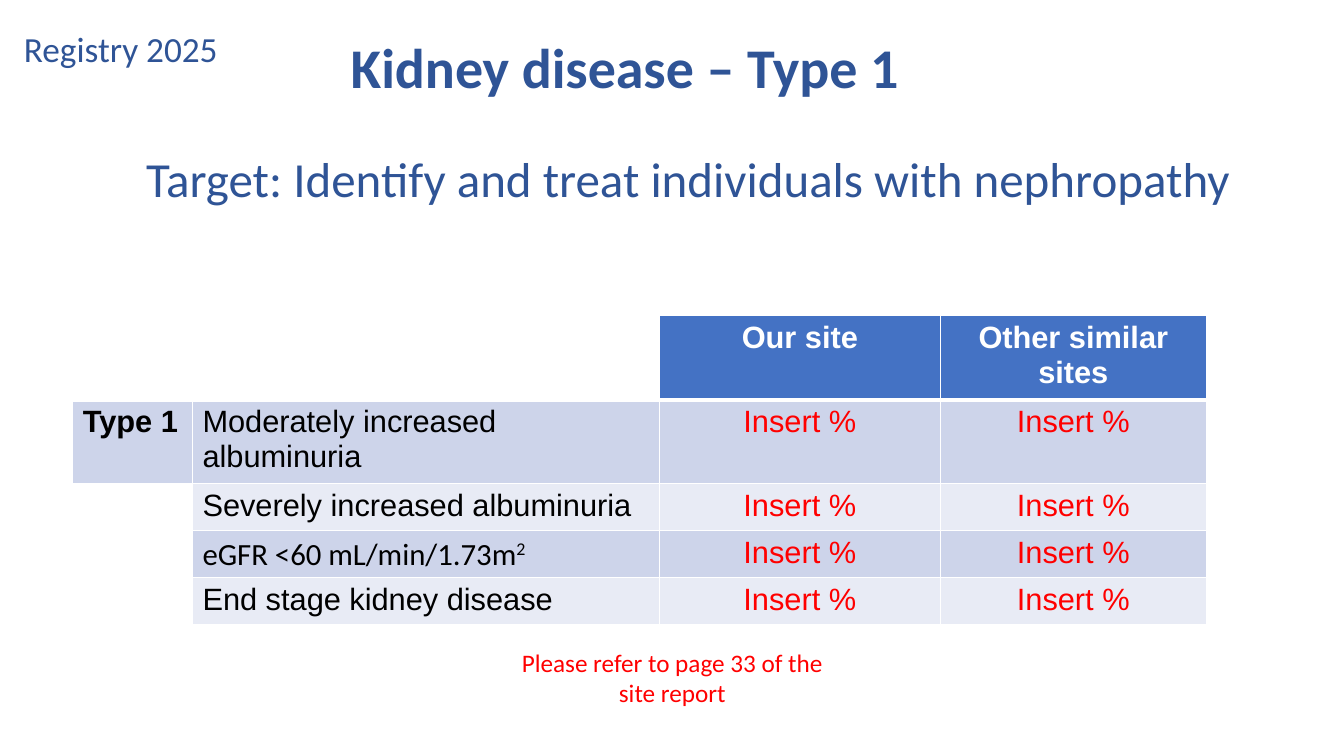
from dataclasses import dataclass

from lxml.etree import SubElement
from pptx import Presentation
from pptx.dml.color import RGBColor as Color
from pptx.enum.text import MSO_ANCHOR as Anchor, MSO_AUTO_SIZE as AutoSize, PP_ALIGN as Align
from pptx.oxml.ns import qn
from pptx.util import Pt


@dataclass(frozen=True)
class Theme:
    heading: str = "2F5496"
    header_fill: str = "4472C4"
    bands: tuple[str, str] = ("CDD4EA", "E8EBF5")
    white: str = "FFFFFF"
    black: str = "000000"
    prompt: str = "FF0000"
    heading_font: str = "Calibri"
    table_font: str = "Arial"
    tag_size: float = 25.2
    title_size: float = 40
    target_size: float = 35
    table_size: float = 22
    note_size: float = 18


THEME = Theme()


@dataclass(frozen=True)
class Style:
    size: float
    color: str
    font: str = THEME.heading_font
    bold: bool = False
    align: Align = Align.LEFT


@dataclass(frozen=True)
class Label:
    text: str
    left: float
    top: float
    width: float
    height: float
    style: Style
    spacing: float = 1.0
    anchor: Anchor = Anchor.TOP
    inset: float = 3.6
    grow: bool = False


@dataclass(frozen=True)
class Measure:
    name: str
    group: str = ""
    font: str = THEME.table_font
    superscript: str = ""


LABELS = [
    Label("Registry 2025", 10, 19.4, 162, 34, Style(THEME.tag_size, THEME.heading),
          spacing=0.9, anchor=Anchor.MIDDLE),
    Label("Target: Identify and treat individuals with nephropathy", 97.2, 107.3, 860, 46,
          Style(THEME.target_size, THEME.heading), spacing=0.9),
    Label("Kidney disease – Type 1", 243.4, 19.4, 422, 55.5,
          Style(THEME.title_size, THEME.heading, bold=True), grow=True),
    Label("Please refer to page 33 of the site report", 362.2, 455, 236, 58.3,
          Style(THEME.note_size, THEME.prompt, align=Align.CENTER), inset=7.2, grow=True),
]

COLUMN_WIDTHS = (85.5, 333.5, 200.7, 190)
ROW_HEIGHT = 33.5
HEADERS = ("", "", "Our site", "Other similar sites")
PROMPT = "Insert %"
MEASURES = [
    Measure("Moderately increased albuminuria", group="Type 1"),
    Measure("Severely increased albuminuria"),
    Measure("eGFR <60 mL/min/1.73m", font=THEME.heading_font, superscript="2"),
    Measure("End stage kidney disease"),
]


def format_para(para, style: Style) -> None:
    para.alignment = style.align
    for span in para.runs:
        font = span.font
        font.name, font.size, font.bold = style.font, Pt(style.size), style.bold
        font.color.rgb = Color.from_string(style.color)


def add_label(page, label: Label) -> None:
    box = page.shapes.add_textbox(*map(Pt, (label.left, label.top, label.width, label.height)))
    frame = box.text_frame
    frame.text = label.text
    frame.word_wrap = True
    frame.vertical_anchor = label.anchor
    frame.auto_size = AutoSize.SHAPE_TO_FIT_TEXT if label.grow else AutoSize.NONE
    frame.margin_top = frame.margin_bottom = Pt(label.inset)
    para = frame.paragraphs[0]
    para.line_spacing = label.spacing
    format_para(para, label.style)


def set_borders(cell, top: float, bottom: float) -> None:
    properties = cell._tc.get_or_add_tcPr()
    for side, width in (("L", 1), ("R", 1), ("T", top), ("B", bottom)):
        line = SubElement(properties, qn(f"a:ln{side}"), w=str(Pt(width)))
        SubElement(SubElement(line, qn("a:solidFill")), qn("a:srgbClr"), val=THEME.white)


def fill_cell(cell, text: str, fill: str, style: Style, superscript: str = "") -> None:
    cell.fill.solid()
    cell.fill.fore_color.rgb = Color.from_string(fill)
    if not text:
        return
    para = cell.text_frame.paragraphs[0]
    para.text = text
    if superscript:
        raised = para.add_run()
        raised.text = superscript
        raised.font._element.set("baseline", "30000")
    format_para(para, style)


def add_results_table(page) -> None:
    rows, columns = len(MEASURES) + 1, len(COLUMN_WIDTHS)
    table = page.shapes.add_table(rows, columns, Pt(52), Pt(225.5),
                                  Pt(sum(COLUMN_WIDTHS)), Pt(ROW_HEIGHT * rows)).table
    table.first_row = table.horz_banding = False
    for column, width in zip(table.columns, COLUMN_WIDTHS):
        column.width = Pt(width)
    for index, row in enumerate(table.rows):
        row.height = Pt(ROW_HEIGHT)
        for cell in row.cells:
            # A heavier rule separates the header from the body
            set_borders(cell, top=3 if index == 1 else 1, bottom=3 if index == 0 else 1)

    # Header row
    size, font = THEME.table_size, THEME.table_font
    header_style = Style(size, THEME.white, font, bold=True, align=Align.CENTER)
    for cell, text in zip(table.rows[0].cells, HEADERS):
        fill_cell(cell, text, THEME.header_fill if text else THEME.white, header_style)

    # One banded row per measure
    group_style = Style(size, THEME.black, font, bold=True)
    prompt_style = Style(size, THEME.prompt, font, align=Align.CENTER)
    for index, measure in enumerate(MEASURES):
        band = THEME.bands[index % 2]
        group, name, *values = table.rows[index + 1].cells
        fill_cell(group, measure.group, band if measure.group else THEME.white, group_style)
        fill_cell(name, measure.name, band, Style(size, THEME.black, measure.font),
                  measure.superscript)
        for cell in values:
            fill_cell(cell, PROMPT, band, prompt_style)


def main() -> None:
    deck = Presentation()
    deck.slide_width, deck.slide_height = Pt(960), Pt(540)
    page = deck.slides.add_slide(deck.slide_layouts[6])
    for label in LABELS:
        add_label(page, label)
    add_results_table(page)
    deck.save("out.pptx")


if __name__ == "__main__":
    main()
